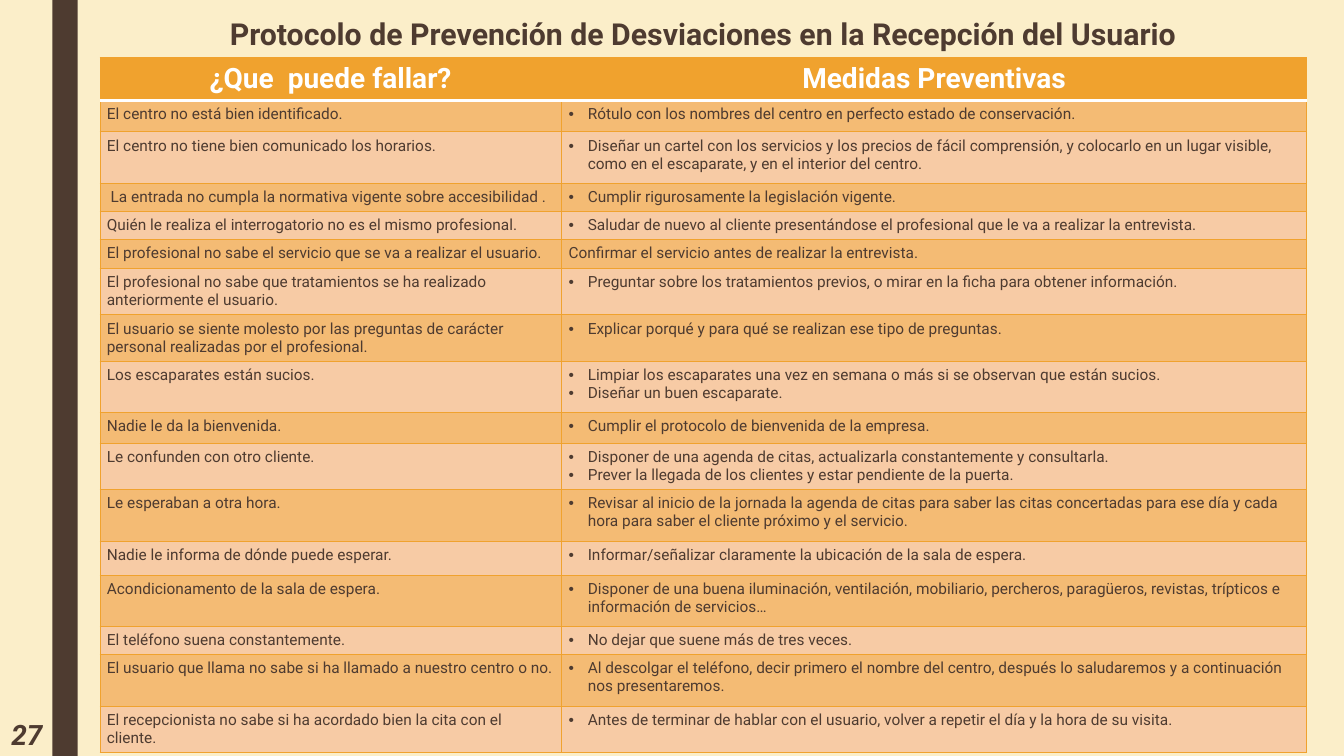
from dataclasses import dataclass

from lxml import etree
from pptx import Presentation
from pptx.dml.color import RGBColor
from pptx.enum import shapes, text
from pptx.oxml import ns
from pptx.util import Inches, Pt


@dataclass(frozen=True)
class Theme:
    font: str = "Roboto"
    background: str = "FBEEC9"
    brown: str = "4E3B30"
    orange: str = "F0A22E"
    dark_band: str = "F4BB74"
    light_band: str = "F7CBA5"
    white: str = "FFFFFF"
    title_size: float = 21.6
    header_size: float = 20
    body_size: float = 11
    grid_width: float = 0.5
    header_rule_width: float = 2.75


@dataclass(frozen=True)
class Risk:
    height: float
    failure: str
    measures: tuple[str, ...]
    bulleted: bool = True


THEME = Theme()
HEADERS = ("¿Que  puede fallar?", "Medidas Preventivas")
HEADER_HEIGHT = 0.26
COLUMN_WIDTHS = (4.58, 7.39)
BULLET_INDENT = 0.19
RISKS = (
    Risk(0.31, "El centro no está bien identificado.",
         ("Rótulo con los nombres del centro en perfecto estado de conservación.",)),
    Risk(0.51, "El centro no tiene bien comunicado los horarios.",
         ("Diseñar un cartel con los servicios y los precios de fácil comprensión, y colocarlo en un "
          "lugar visible, como en el escaparate, y en el interior del centro.",)),
    Risk(0.21, " La entrada no cumpla la normativa vigente sobre accesibilidad .",
         ("Cumplir rigurosamente la legislación vigente.",)),
    Risk(0.28, "Quién le realiza el interrogatorio no es el mismo profesional.",
         ("Saludar de nuevo al cliente presentándose el profesional que le va a realizar la entrevista.",)),
    Risk(0.29, "El profesional no sabe el servicio que se va a realizar el usuario.",
         ("Confirmar el servicio antes de realizar la entrevista.",), bulleted=False),
    Risk(0.29, "El profesional no sabe que tratamientos se ha realizado anteriormente el usuario.",
         ("Preguntar sobre los tratamientos previos, o mirar en la ficha para obtener información.",)),
    Risk(0.29, "El usuario se siente molesto por las preguntas de carácter personal realizadas por el profesional.",
         ("Explicar porqué y para qué se realizan ese tipo de preguntas.",)),
    Risk(0.51, "Los escaparates están sucios.",
         ("Limpiar los escaparates una vez en semana o más si se observan que están sucios.",
          "Diseñar un buen escaparate.")),
    Risk(0.31, "Nadie le da la bienvenida.",
         ("Cumplir el protocolo de bienvenida de la empresa.",)),
    Risk(0.25, "Le confunden con otro cliente.",
         ("Disponer de una agenda de citas, actualizarla constantemente y consultarla.",
          "Prever la llegada de los clientes y estar pendiente de la puerta.")),
    Risk(0.51, "Le esperaban a otra hora.",
         ("Revisar al inicio de la jornada la agenda de citas para saber las citas concertadas para ese "
          "día y cada hora para saber el cliente próximo y el servicio.",)),
    Risk(0.34, "Nadie le informa de dónde puede esperar.",
         ("Informar/señalizar claramente la ubicación de la sala de espera.",)),
    Risk(0.51, "Acondicionamento de la sala de espera.",
         ("Disponer de una buena iluminación, ventilación, mobiliario, percheros, paragüeros, revistas, "
          "trípticos e información de servicios…",)),
    Risk(0.27, "El teléfono suena constantemente.",
         ("No dejar que suene más de tres veces.",)),
    Risk(0.51, "El usuario que llama no sabe si ha llamado a nuestro centro o no.",
         ("Al descolgar el teléfono, decir primero el nombre del centro, después lo saludaremos y a "
          "continuación nos presentaremos.",)),
    Risk(0.22, "El recepcionista no sabe si ha acordado bien la cita con el cliente.",
         ("Antes de terminar de hablar con el usuario, volver a repetir el día y la hora de su visita.",)),
)


def rgb(color: str) -> RGBColor:
    return RGBColor.from_string(color)


def write(paragraph, content: str, color: str, size: float, bold: bool = False, italic: bool = False) -> None:
    run = paragraph.add_run()
    run.text = content
    font_format = {"name": THEME.font, "size": Pt(size), "bold": bold, "italic": italic}
    for name, value in font_format.items():
        setattr(run.font, name, value)
    run.font.color.rgb = rgb(color)


def add_bullet(paragraph) -> None:
    properties = paragraph._p.get_or_add_pPr()
    properties.set("marL", str(Inches(BULLET_INDENT)))
    properties.set("indent", str(-Inches(BULLET_INDENT)))
    etree.SubElement(properties, ns.qn("a:buFont"), typeface="Arial")
    etree.SubElement(properties, ns.qn("a:buChar"), char="•")


def set_borders(cell, top: tuple[str, float], bottom: tuple[str, float]) -> None:
    """Draw all four sides; left and right always use the thin grid line."""
    grid = (THEME.orange, THEME.grid_width)
    sides = {"a:lnL": grid, "a:lnR": grid, "a:lnT": top, "a:lnB": bottom}
    properties = cell._tc.get_or_add_tcPr()
    for position, (tag, (color, width)) in enumerate(sides.items()):
        line = etree.Element(ns.qn(tag), w=str(Pt(width)))
        fill = etree.SubElement(line, ns.qn("a:solidFill"))
        etree.SubElement(fill, ns.qn("a:srgbClr"), val=color)
        properties.insert(position, line)


def style_cell(cell, fill: str, side_margin: float) -> None:
    margins = {"margin_left": side_margin, "margin_right": side_margin,
               "margin_top": 0.05, "margin_bottom": 0.05}
    for name, value in margins.items():
        setattr(cell, name, Inches(value))
    cell.fill.solid()
    cell.fill.fore_color.rgb = rgb(fill)


def fill_body_cell(cell, lines: tuple[str, ...], bulleted: bool) -> None:
    for index, line in enumerate(lines):
        paragraph = cell.text_frame.add_paragraph() if index else cell.text_frame.paragraphs[0]
        if bulleted:
            add_bullet(paragraph)
        write(paragraph, line, THEME.brown, THEME.body_size)


def add_risk_table(slide) -> None:
    frame = slide.shapes.add_table(len(RISKS) + 1, len(HEADERS), Inches(0.99), Inches(0.57),
                                   Inches(sum(COLUMN_WIDTHS)), Inches(6.78))
    table = frame.table
    table.horz_banding = False
    for column, width in zip(table.columns, COLUMN_WIDTHS):
        column.width = Inches(width)
    grid = (THEME.orange, THEME.grid_width)
    header_rule = (THEME.white, THEME.header_rule_width)

    table.rows[0].height = Inches(HEADER_HEIGHT)
    for cell, header in zip(table.rows[0].cells, HEADERS):
        style_cell(cell, THEME.orange, 0.1)
        set_borders(cell, grid, header_rule)
        paragraph = cell.text_frame.paragraphs[0]
        paragraph.alignment = text.PP_ALIGN.CENTER
        write(paragraph, header, THEME.white, THEME.header_size, bold=True)

    for index, risk in enumerate(RISKS, start=1):
        table.rows[index].height = Inches(risk.height)
        for cell in table.rows[index].cells:
            style_cell(cell, THEME.dark_band if index % 2 else THEME.light_band, 0.07)
            set_borders(cell, header_rule if index == 1 else grid, grid)
        fill_body_cell(table.cell(index, 0), (risk.failure,), False)
        fill_body_cell(table.cell(index, 1), risk.measures, risk.bulleted)
    frame.height = Inches(6.78)


def add_side_bar(slide) -> None:
    bar = slide.shapes.add_shape(shapes.MSO_SHAPE.RECTANGLE, Inches(0.52), 0, Inches(0.25), Inches(7.5))
    bar.shadow.inherit = False
    bar.fill.solid()
    bar.fill.fore_color.rgb = rgb(THEME.brown)
    bar.line.fill.background()


def format_title(slide) -> None:
    title = slide.shapes.title
    box = {"left": 2.18, "top": -0.09, "width": 10.92, "height": 0.67}
    for name, value in box.items():
        setattr(title, name, Inches(value))
    frame_format = {"vertical_anchor": text.MSO_ANCHOR.MIDDLE, "word_wrap": True,
                    "auto_size": text.MSO_AUTO_SIZE.NONE}
    for name, value in frame_format.items():
        setattr(title.text_frame, name, value)
    paragraph = title.text_frame.paragraphs[0]
    paragraph.alignment = text.PP_ALIGN.LEFT
    paragraph.line_spacing = 1.5
    write(paragraph, "Protocolo de Prevención de Desviaciones en la Recepción del Usuario",
          THEME.brown, THEME.title_size, bold=True)


def add_page_number(slide) -> None:
    box = slide.shapes.add_textbox(Inches(-0.07), Inches(7.06), Inches(0.59), Inches(0.44))
    box.text_frame.word_wrap = True
    box.text_frame.vertical_anchor = text.MSO_ANCHOR.MIDDLE
    paragraph = box.text_frame.paragraphs[0]
    paragraph.alignment = text.PP_ALIGN.RIGHT
    write(paragraph, "27", THEME.brown, THEME.header_size, bold=True, italic=True)


def main() -> None:
    presentation = Presentation()
    presentation.slide_width, presentation.slide_height = Inches(13.33), Inches(7.5)
    slide = presentation.slides.add_slide(presentation.slide_layouts[5])
    slide.background.fill.solid()
    slide.background.fill.fore_color.rgb = rgb(THEME.background)
    add_side_bar(slide)
    format_title(slide)
    add_risk_table(slide)
    add_page_number(slide)
    presentation.save("out.pptx")


if __name__ == "__main__":
    main()
